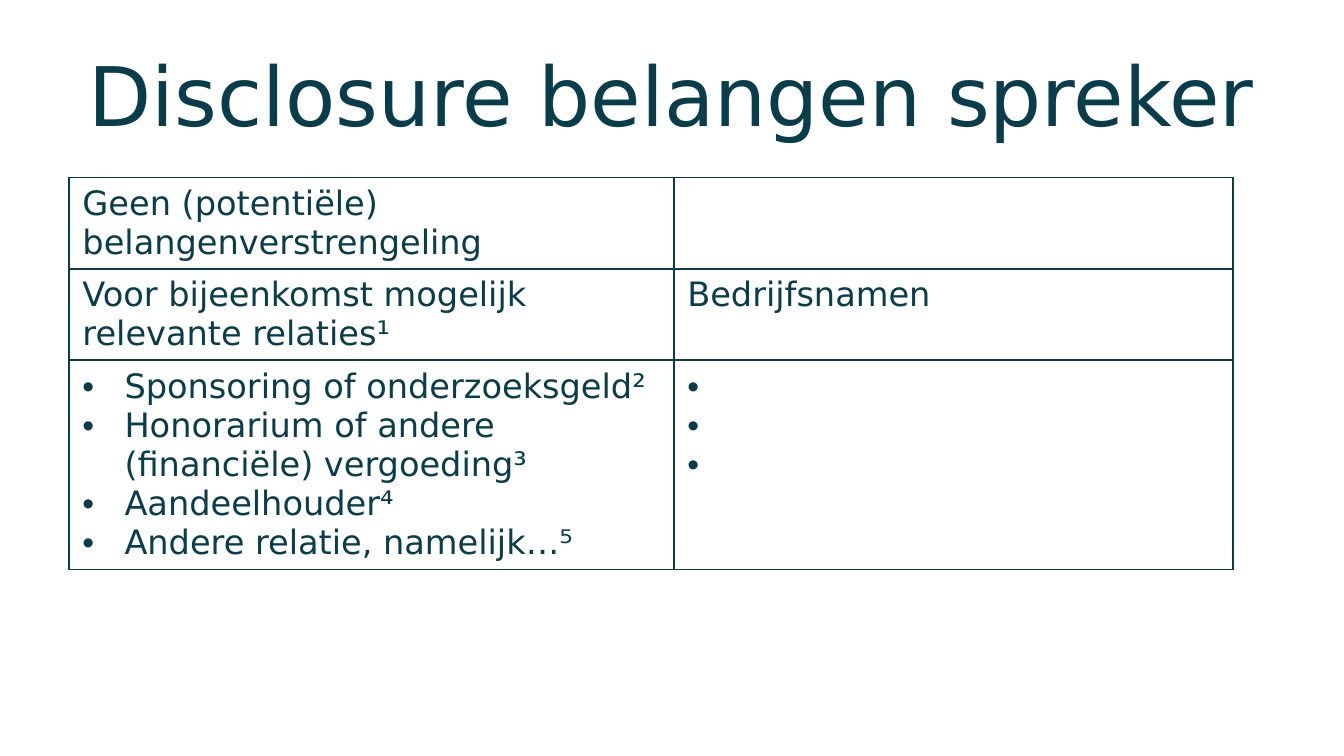
from lxml import etree
from pptx import Presentation
from pptx.dml.color import RGBColor
from pptx.enum.text import MSO_ANCHOR, MSO_AUTO_SIZE, PP_ALIGN
from pptx.oxml.ns import qn
from pptx.util import Pt

CENTER = PP_ALIGN.CENTER
MIDDLE = MSO_ANCHOR.MIDDLE
NO_AUTOFIT = MSO_AUTO_SIZE.NONE

TITLE_ONLY = 5
BULLET_INDENT = 22.5

# Each cell: (paragraphs, bulleted)
DISCLOSURES = [
    [(["Geen (potentiële)", "belangenverstrengeling"], False), ([], False)],
    [(["Voor bijeenkomst mogelijk", "relevante relaties¹"], False),
     (["Bedrijfsnamen"], False)],
    [(["Sponsoring of onderzoeksgeld²",
       "Honorarium of andere (financiële) vergoeding³",
       "Aandeelhouder⁴",
       "Andere relatie, namelijk…⁵"], True),
     ([" "] * 3, True)],  # open bullets, to be filled in by the speaker
]


def rgb(hex_color):
    return RGBColor.from_string(hex_color)


class SlideBuilder:
    font_name = "DejaVu Sans"
    ink = "093D4B"
    border_width = 1

    def __init__(self, slide):
        self.slide = slide

    def style_runs(self, paragraph, size):
        for run in paragraph.runs:
            run.font.name = self.font_name
            run.font.size = Pt(size)
            run.font.color.rgb = rgb(self.ink)

    def title(self, text, left, top, width, height, size):
        heading = self.slide.shapes.title
        heading.left, heading.top = Pt(left), Pt(top)
        heading.width, heading.height = Pt(width), Pt(height)
        frame = heading.text_frame
        frame.text = text
        frame.auto_size = NO_AUTOFIT
        frame.vertical_anchor = MIDDLE
        frame.paragraphs[0].alignment = CENTER
        self.style_runs(frame.paragraphs[0], size)

    def bullet(self, paragraph):
        properties = paragraph._p.get_or_add_pPr()
        properties.set("marL", str(Pt(BULLET_INDENT)))
        properties.set("indent", str(-Pt(BULLET_INDENT)))
        etree.SubElement(properties, qn("a:buFont"), typeface="Arial")
        etree.SubElement(properties, qn("a:buChar"), char="•")

    def borders(self, cell):
        properties = cell._tc.get_or_add_tcPr()
        for side in ("lnL", "lnR", "lnT", "lnB"):
            line = etree.SubElement(properties, qn(f"a:{side}"),
                                    w=str(Pt(self.border_width)))
            fill = etree.SubElement(line, qn("a:solidFill"))
            etree.SubElement(fill, qn("a:srgbClr"), val=self.ink)

    def cell(self, cell, lines, bulleted, size):
        self.borders(cell)
        cell.fill.background()
        cell.text_frame.text = "\n".join(lines)
        for paragraph in cell.text_frame.paragraphs:
            if bulleted:
                self.bullet(paragraph)
            self.style_runs(paragraph, size)

    def table(self, content, left, top, column_widths, row_heights, size):
        grid = self.slide.shapes.add_table(
            len(row_heights), len(column_widths), Pt(left), Pt(top),
            Pt(sum(column_widths)), Pt(sum(row_heights))).table
        grid.first_row = grid.horz_banding = False
        for column, width in zip(grid.columns, column_widths):
            column.width = Pt(width)
        for row, height, entries in zip(grid.rows, row_heights, content):
            row.height = Pt(height)
            for cell, (lines, bulleted) in zip(row.cells, entries):
                self.cell(cell, lines, bulleted, size)


def main():
    deck = Presentation()
    deck.slide_width, deck.slide_height = Pt(720), Pt(405)
    builder = SlideBuilder(deck.slides.add_slide(deck.slide_layouts[TITLE_ONLY]))

    # Heading
    builder.title("Disclosure belangen spreker", 36, 16.5, 648, 67.5, size=44)

    # Disclosure table
    builder.table(DISCLOSURES, 37, 95, column_widths=[324, 299.5],
                  row_heights=[49, 49, 112], size=18)

    deck.save("out.pptx")


if __name__ == "__main__":
    main()
